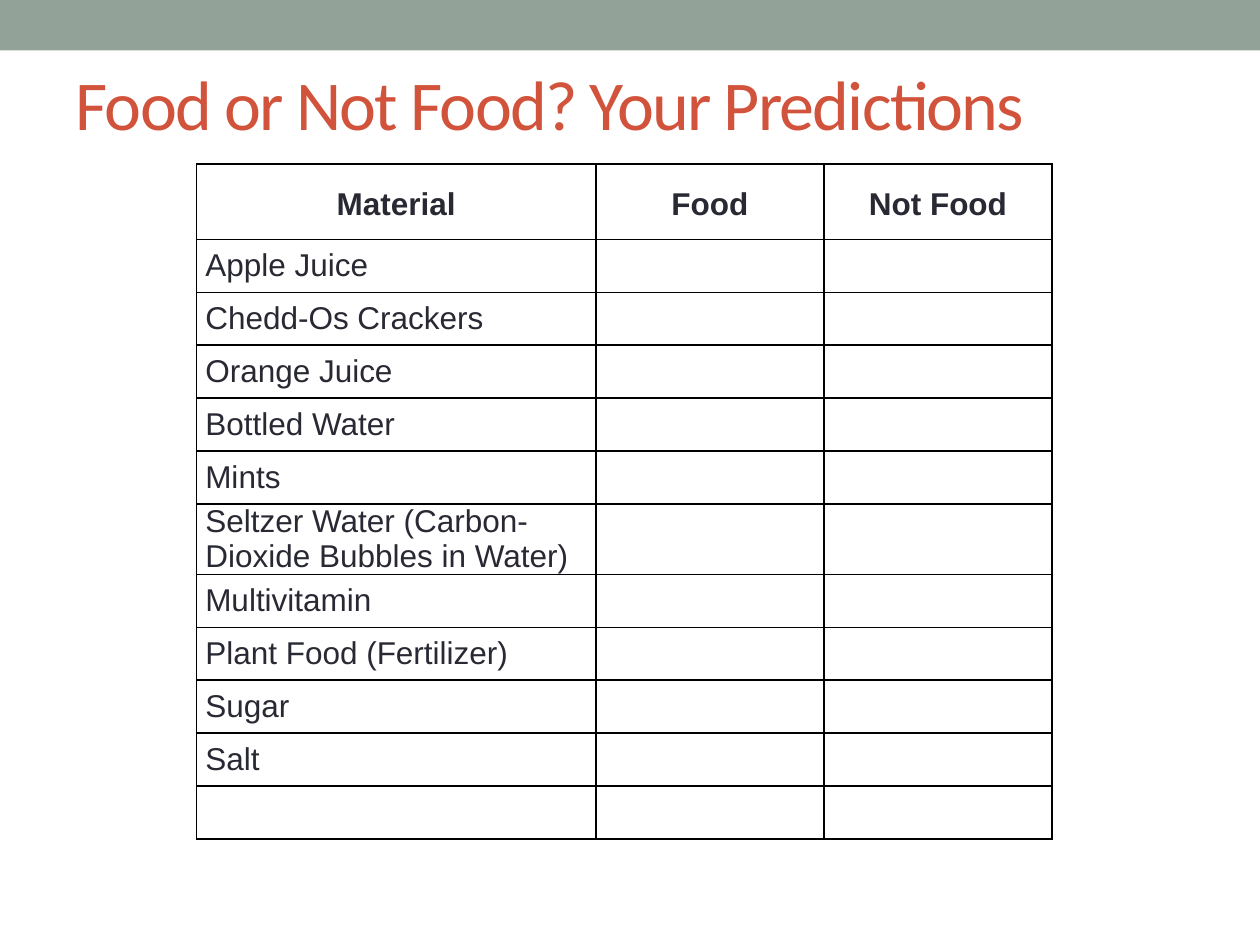
import dataclasses

import lxml.etree
import pptx
import pptx.dml.color
import pptx.enum.shapes
import pptx.enum.text
import pptx.oxml.ns
import pptx.util

Inches = pptx.util.Inches
Pt = pptx.util.Pt
Align = pptx.enum.text.PP_ALIGN
Anchor = pptx.enum.text.MSO_ANCHOR


@dataclasses.dataclass
class Material:
    name: str
    height: float = 0.42
    gap: float = 0


HEADINGS = ["Material", "Food", "Not Food"]
HEADING_HEIGHT = 0.6
COLUMN_WIDTHS = [3.17, 1.81, 1.81]
MATERIALS = [
    Material("Apple Juice"),
    Material("Chedd-Os Crackers"),
    Material("Orange Juice"),
    Material("Bottled Water"),
    Material("Mints"),
    Material("Seltzer Water (Carbon-Dioxide Bubbles in Water)", height=0.55, gap=3),
    Material("Multivitamin"),
    Material("Plant Food (Fertilizer)"),
    Material("Sugar"),
    Material("Salt"),
    Material(""),
]


def color(value: str) -> pptx.dml.color.RGBColor:
    return pptx.dml.color.RGBColor.from_string(value)


def write(frame, text: str, *, size=18, font="Arial", fill="292934", bold=False,
          align=Align.LEFT, line_spacing=1.0, gap=0, tracking=0) -> None:
    para = frame.paragraphs[0]
    para.alignment = align
    para.line_spacing = line_spacing
    para.space_before = para.space_after = Pt(gap)
    span = para.add_run()
    span.text = text
    span.font.size = Pt(size)
    span.font.name = font
    span.font.bold = bold
    span.font.color.rgb = color(fill)
    if tracking:
        span._r.get_or_add_rPr().set("spc", str(tracking * 100))


def add_borders(cell, value: str, width: float) -> None:
    properties = cell._tc.get_or_add_tcPr()
    for position, side in enumerate(("lnL", "lnR", "lnT", "lnB")):
        line = lxml.etree.Element(pptx.oxml.ns.qn(f"a:{side}"), w=str(Pt(width)))
        solid = lxml.etree.SubElement(line, pptx.oxml.ns.qn("a:solidFill"))
        lxml.etree.SubElement(solid, pptx.oxml.ns.qn("a:srgbClr"), val=value)
        properties.insert(position, line)


def format_cell(cell) -> None:
    cell.fill.background()
    cell.vertical_anchor = Anchor.MIDDLE
    cell.margin_left = cell.margin_right = Inches(0.07)
    cell.margin_top = cell.margin_bottom = 0
    add_borders(cell, "000000", 1)


def add_band(page) -> None:
    band = page.shapes.add_shape(pptx.enum.shapes.MSO_SHAPE.RECTANGLE,
                                 0, 0, Inches(10), Inches(0.4))
    band.shadow.inherit = False
    band.fill.solid()
    band.fill.fore_color.rgb = color("93A299")
    band.line.fill.background()


def add_title(page, text: str) -> None:
    title = page.shapes.title
    title.left, title.top = Inches(0.5), Inches(0.32)
    title.width, title.height = Inches(9), Inches(0.98)
    frame = title.text_frame
    frame.auto_size = pptx.enum.text.MSO_AUTO_SIZE.NONE
    frame.vertical_anchor = Anchor.MIDDLE
    write(frame, text, size=40, font="Calibri", fill="D2533C", tracking=-1)


def add_prediction_table(page) -> None:
    heights = [HEADING_HEIGHT] + [material.height for material in MATERIALS]
    table = page.shapes.add_table(
        len(heights), len(COLUMN_WIDTHS), Inches(1.56), Inches(1.3),
        Inches(sum(COLUMN_WIDTHS)), Inches(sum(heights))).table
    for column, width in zip(table.columns, COLUMN_WIDTHS):
        column.width = Inches(width)
    for row, height in zip(table.rows, heights):
        row.height = Inches(height)
    for cell in table.iter_cells():
        format_cell(cell)
    for index, heading in enumerate(HEADINGS):
        write(table.cell(0, index).text_frame, heading, bold=True,
              align=Align.CENTER, line_spacing=1.15)
    for index, material in enumerate(MATERIALS, start=1):
        if material.name:
            write(table.cell(index, 0).text_frame, material.name, gap=material.gap)


def main() -> None:
    deck = pptx.Presentation()
    deck.slide_width, deck.slide_height = Inches(10), Inches(7.5)
    page = deck.slides.add_slide(deck.slide_layouts[5])
    add_band(page)
    add_title(page, "Food or Not Food? Your Predictions")
    add_prediction_table(page)
    deck.save("out.pptx")


if __name__ == "__main__":
    main()
